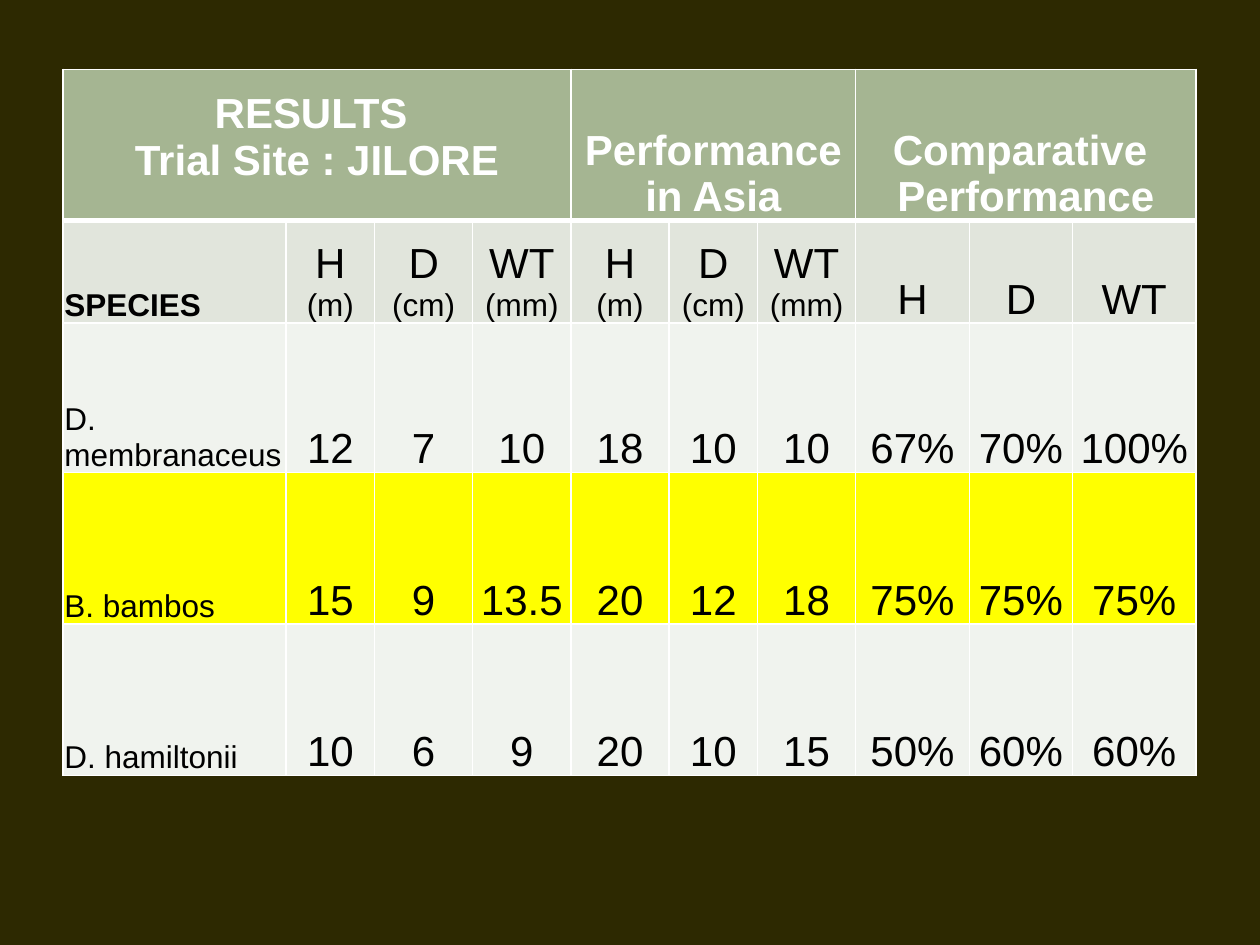
from lxml.etree import SubElement
from pptx import Presentation
from pptx.dml.color import RGBColor
from pptx.enum.text import MSO_ANCHOR, PP_ALIGN
from pptx.oxml.ns import qn
from pptx.util import Cm, Pt

FONT = "Arial"
WHITE, BLACK = "FFFFFF", "000000"
BACKGROUND, HEADING, SUBHEADING = "2D2901", "A5B592", "E1E5DC"
PLAIN, HIGHLIGHT = "F0F3EE", "FFFF00"
COLUMN_WIDTHS = [4.5, 1.78, 1.98, 1.98, 1.98, 1.78, 1.98, 2.29, 2.08, 2.49]
ROW_HEIGHTS = [3.05, 2.06, 3.02, 3.05, 3.05]
INSET = 0.03
FOOT_GAP = 0.73

GROUPS = [
    (0, 3, ["RESULTS ", "Trial Site : JILORE"], FOOT_GAP),
    (4, 6, ["Performance", " in Asia "], 0),
    (7, 9, ["Comparative ", "Performance"], 0),
]
MEASURES = [("H", "(m)"), ("D", "(cm)"), ("WT", "(mm)")]
SPECIES = [
    ("D. membranaceus", PLAIN, ["12", "7", "10", "18", "10", "10", "67%", "70%", "100%"]),
    ("B. bambos", HIGHLIGHT, ["15", "9", "13.5", "20", "12", "18", "75%", "75%", "75%"]),
    ("D. hamiltonii", PLAIN, ["10", "6", "9", "20", "10", "15", "50%", "60%", "60%"]),
]


def color(value):
    return RGBColor.from_string(value)


def write(frame, text, size=24, ink=BLACK, bold=False, align=PP_ALIGN.CENTER):
    para = frame.paragraphs[0]
    if para.runs:
        para = frame.add_paragraph()
    para.alignment = align
    span = para.add_run()
    span.text = text
    span.font.name = FONT
    span.font.size = Pt(size)
    span.font.bold = bold
    span.font.color.rgb = color(ink)


def draw_border(cell, side, width):
    line = SubElement(cell._tc.get_or_add_tcPr(), qn(f"a:ln{side}"), w=str(Pt(width)))
    fill = SubElement(line, qn("a:solidFill"))
    SubElement(fill, qn("a:srgbClr"), val=WHITE)


def style_cell(cell, fill, top=1, bottom=1):
    for side, width in (("L", 1), ("R", 1), ("T", top), ("B", bottom)):
        draw_border(cell, side, width)
    cell.fill.solid()
    cell.fill.fore_color.rgb = color(fill)
    cell.vertical_anchor = MSO_ANCHOR.BOTTOM
    cell.margin_left = cell.margin_right = cell.margin_top = Cm(INSET)
    cell.margin_bottom = 0


def fill_headings(table):
    for cell in table.rows[0].cells:
        style_cell(cell, HEADING, bottom=3)
    for first, last, lines, gap in GROUPS:
        cell = table.cell(0, first)
        cell.merge(table.cell(0, last))
        cell.margin_bottom = Cm(gap)
        for line in lines:
            write(cell.text_frame, line, ink=WHITE, bold=True)


def fill_measures(table):
    for cell in table.rows[1].cells:
        style_cell(cell, SUBHEADING, top=3)
    write(table.cell(1, 0).text_frame, "SPECIES", size=18, bold=True, align=PP_ALIGN.LEFT)
    for column, (name, unit) in enumerate(MEASURES * len(GROUPS), 1):
        frame = table.cell(1, column).text_frame
        write(frame, name)
        if column < GROUPS[-1][0]:
            write(frame, unit, size=18)


def fill_species(table):
    for row, (name, fill, values) in enumerate(SPECIES, 2):
        for cell in table.rows[row].cells:
            style_cell(cell, fill)
        write(table.cell(row, 0).text_frame, name, size=18, align=PP_ALIGN.LEFT)
        for column, value in enumerate(values, 1):
            write(table.cell(row, column).text_frame, value)


def add_results_table(page, left, top):
    table = page.shapes.add_table(
        len(ROW_HEIGHTS), len(COLUMN_WIDTHS), Cm(left), Cm(top),
        Cm(sum(COLUMN_WIDTHS)), Cm(sum(ROW_HEIGHTS)),
    ).table
    for column, width in zip(table.columns, COLUMN_WIDTHS):
        column.width = Cm(width)
    for row, height in zip(table.rows, ROW_HEIGHTS):
        row.height = Cm(height)
    fill_headings(table)
    fill_measures(table)
    fill_species(table)


def main():
    deck = Presentation()
    deck.slide_width, deck.slide_height = Cm(25.4), Cm(19.05)
    page = deck.slides.add_slide(deck.slide_layouts[6])
    page.background.fill.solid()
    page.background.fill.fore_color.rgb = color(BACKGROUND)
    add_results_table(page, 1.27, 1.4)
    deck.save("out.pptx")


if __name__ == "__main__":
    main()
